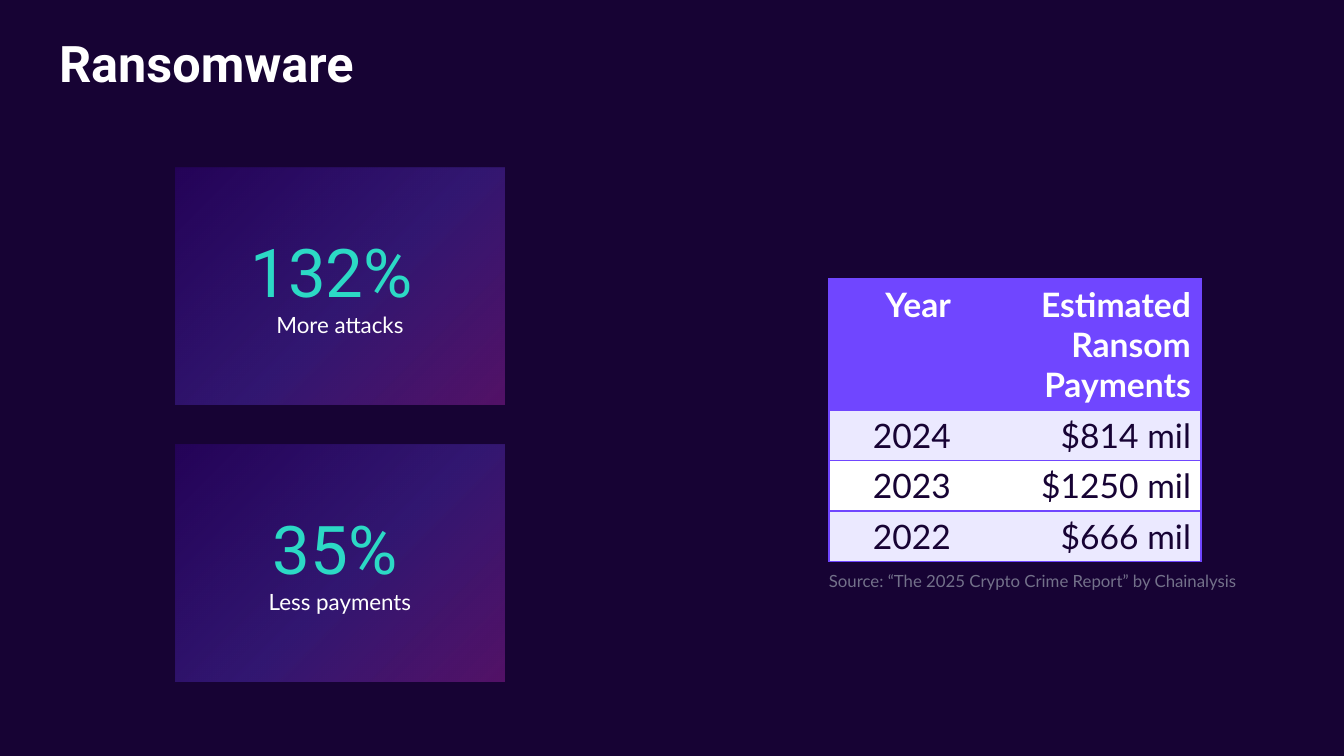
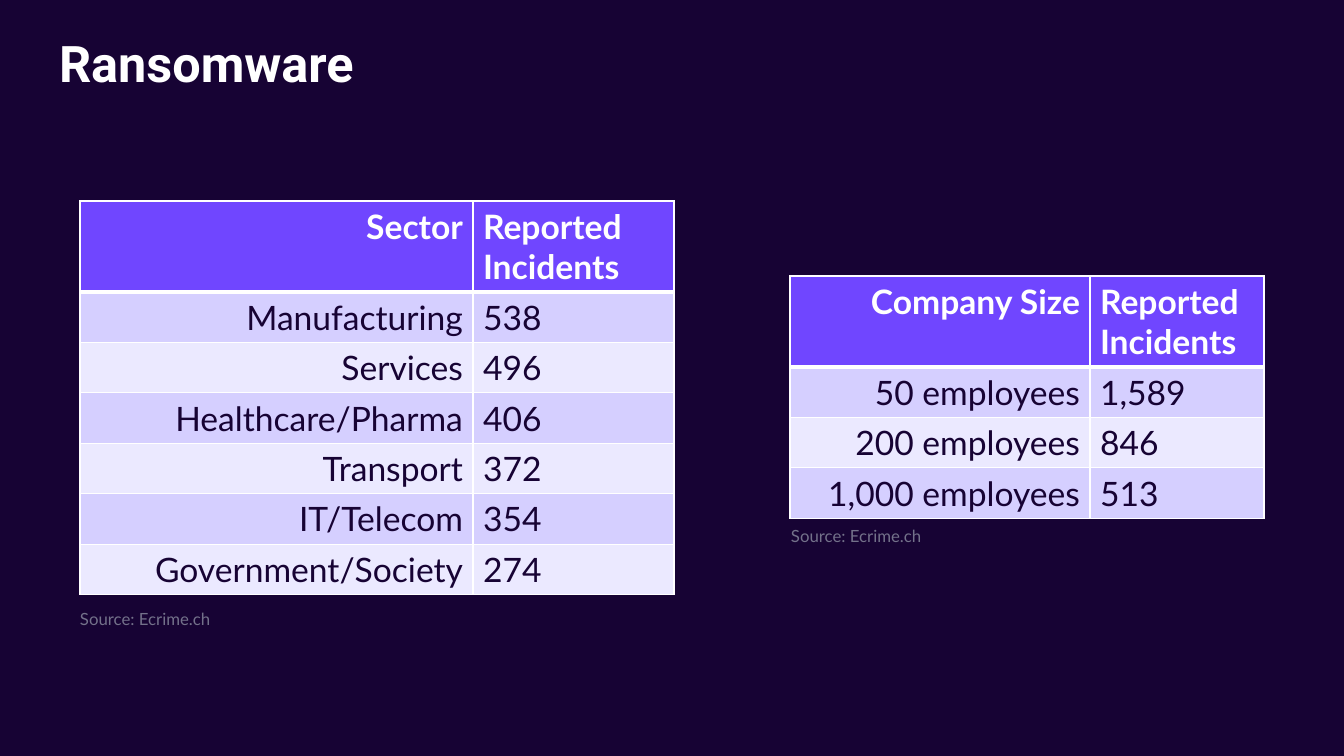
from lxml import etree
from pptx import Presentation, oxml, util as u
from pptx.dml.color import RGBColor
from pptx.enum import shapes, text
from pptx.oxml.ns import qn

# Shared look
BACK, WHITE, VIOLET, TEAL, GREY = "170334", "FFFFFF", "7046FF", "2CD9C5", "73718A"
PALE, LILAC = "EBE9FF", "D5CFFF"
HEAD, BODY = "Roboto", "Lato"
PLAIN = "{2D5ABB26-0587-4C30-8999-92F81FD0307C}"
NS = "http://schemas.openxmlformats.org/drawingml/2006/main"
LEFT, MID, RIGHT = text.PP_ALIGN.LEFT, text.PP_ALIGN.CENTER, text.PP_ALIGN.RIGHT
rgb = RGBColor.from_string


def px(*nums):
    return [u.Emu(round(n * 914400 / 100.8)) for n in nums]


def put(par, words, size, face, color, bold=False):
    run = par.add_run()
    run.text = words
    run.font.size = u.Pt(size)
    run.font.name = face
    run.font.bold = bold
    run.font.color.rgb = rgb(color)


deck = Presentation()
deck.slide_width, deck.slide_height = px(1344, 756)
fill = deck.slide_master.background.fill
fill.solid()
fill.fore_color.rgb = rgb(BACK)

# Slides with their titles
pages = []
for name in ("Ransomware", "Ransomware"):
    page = deck.slides.add_slide(deck.slide_layouts[5])
    pages.append(page)
    title = page.shapes.title
    title.left, title.top, title.width, title.height = px(59, 39, 1185, 55)
    frame = title.text_frame
    frame.margin_left = frame.margin_right = frame.margin_top = frame.margin_bottom = 0
    frame.vertical_anchor = text.MSO_ANCHOR.TOP
    frame.auto_size = text.MSO_AUTO_SIZE.NONE
    par = frame.paragraphs[0]
    par.alignment = LEFT
    par.line_spacing = 0.9
    put(par, name, 36, HEAD, WHITE, True)

# Gradient cards with key figures
stops = "".join(
    f'<a:gs pos="{pos}000"><a:srgbClr val="{color}"><a:alpha val="30000"/></a:srgbClr></a:gs>'
    for pos, color in ((0, "4303A9"), (54, VIOLET), (100, "DF34DA")))
blend = (f'<a:gradFill xmlns:a="{NS}" rotWithShape="1"><a:gsLst>{stops}</a:gsLst>'
         '<a:lin ang="2700000" scaled="0"/></a:gradFill>')
stats = [
    (168, "132%", 48, "More attacks"),
    (445, "35%", 28, "Less payments"),
]
for top, value, gap, note in stats:
    card = pages[0].shapes.add_shape(shapes.MSO_SHAPE.RECTANGLE, *px(175, top, 330, 237))
    card.shadow.inherit = False
    card.line.fill.background()
    card._element.spPr.find(qn("a:prstGeom")).addnext(oxml.parse_xml(blend))
    frame = pages[0].shapes.add_textbox(*px(176, top + 57, 328, 119)).text_frame
    frame.word_wrap = True
    frame.vertical_anchor = text.MSO_ANCHOR.MIDDLE
    par = frame.paragraphs[0]
    par.alignment = MID
    put(par, value, 48, HEAD, TEAL)
    put(par, " ", gap, HEAD, TEAL)
    par.add_line_break()
    put(par, note, 16, BODY, WHITE)

# Tables: page, place, columns, header height, second column's alignment,
# row fills, rule colour, header rule, inner upright rule, rows, source and its place
tables = [
    (0, (829, 279), (132, 240), 131, RIGHT, (PALE, WHITE), VIOLET, 1, False,
     [("Year", "Estimated Ransom Payments"),
      ("2024", "$814 mil"),
      ("2023", "$1250 mil"),
      ("2022", "$666 mil")],
     "Source: “The 2025 Crypto Crime Report” by Chainalysis", (829, 571)),
    (1, (80, 201), (393, 201), 91, LEFT, (LILAC, PALE), WHITE, 3, True,
     [("Sector", "Reported Incidents"),
      ("Manufacturing", "538"),
      ("Services", "496"),
      ("Healthcare/Pharma", "406"),
      ("Transport", "372"),
      ("IT/Telecom", "354"),
      ("Government/Society", "274")],
     "Source: Ecrime.ch", (80, 609)),
    (1, (790, 276), (300, 174), 91, LEFT, (LILAC, PALE), WHITE, 3, True,
     [("Company Size", "Reported Incidents"),
      ("50 employees", "1,589"),
      ("200 employees", "846"),
      ("1,000 employees", "513")],
     "Source: Ecrime.ch", (791, 526)),
]
ROW = 50.4
for num, spot, cols, tall, side, bands, rule, thick, inner, rows, source, foot in tables:
    page = pages[num]
    high = tall + ROW * (len(rows) - 1)
    grid = page.shapes.add_table(len(rows), 2, *px(*spot, sum(cols), high)).table
    grid.first_row = grid.horz_banding = False
    grid._tbl.tblPr.find(qn("a:tableStyleId")).text = PLAIN
    for col, wide in zip(grid.columns, px(*cols)):
        col.width = wide
    for r, line in enumerate(rows):
        grid.rows[r].height = px(ROW if r else tall)[0]
        for c, words in enumerate(line):
            cell = grid.cell(r, c)
            par = cell.text_frame.paragraphs[0]
            par.alignment = side if c else RIGHT
            put(par, words, 24, BODY, BACK if r else WHITE, not r)
            # Cell rules come before the fill
            props = cell._tc.get_or_add_tcPr()
            edges = {
                "lnL": 1 if inner or c == 0 else 0,
                "lnR": 1 if inner or c == 1 else 0,
                "lnT": thick if r == 1 else 1,
                "lnB": thick if r == 0 else 1,
            }
            for tag, size in edges.items():
                if size:
                    edge = etree.SubElement(props, qn("a:" + tag), w=str(u.Pt(size)))
                    solid = etree.SubElement(edge, qn("a:solidFill"))
                    etree.SubElement(solid, qn("a:srgbClr"), val=rule)
            cell.fill.solid()
            cell.fill.fore_color.rgb = rgb(bands[(r - 1) % 2] if r else VIOLET)

    # Source line
    frame = page.shapes.add_textbox(*px(*foot, 467, 20)).text_frame
    frame.margin_left = frame.margin_right = frame.margin_top = frame.margin_bottom = 0
    frame.word_wrap = True
    put(frame.paragraphs[0], source, 12, BODY, GREY)

deck.save("out.pptx")
